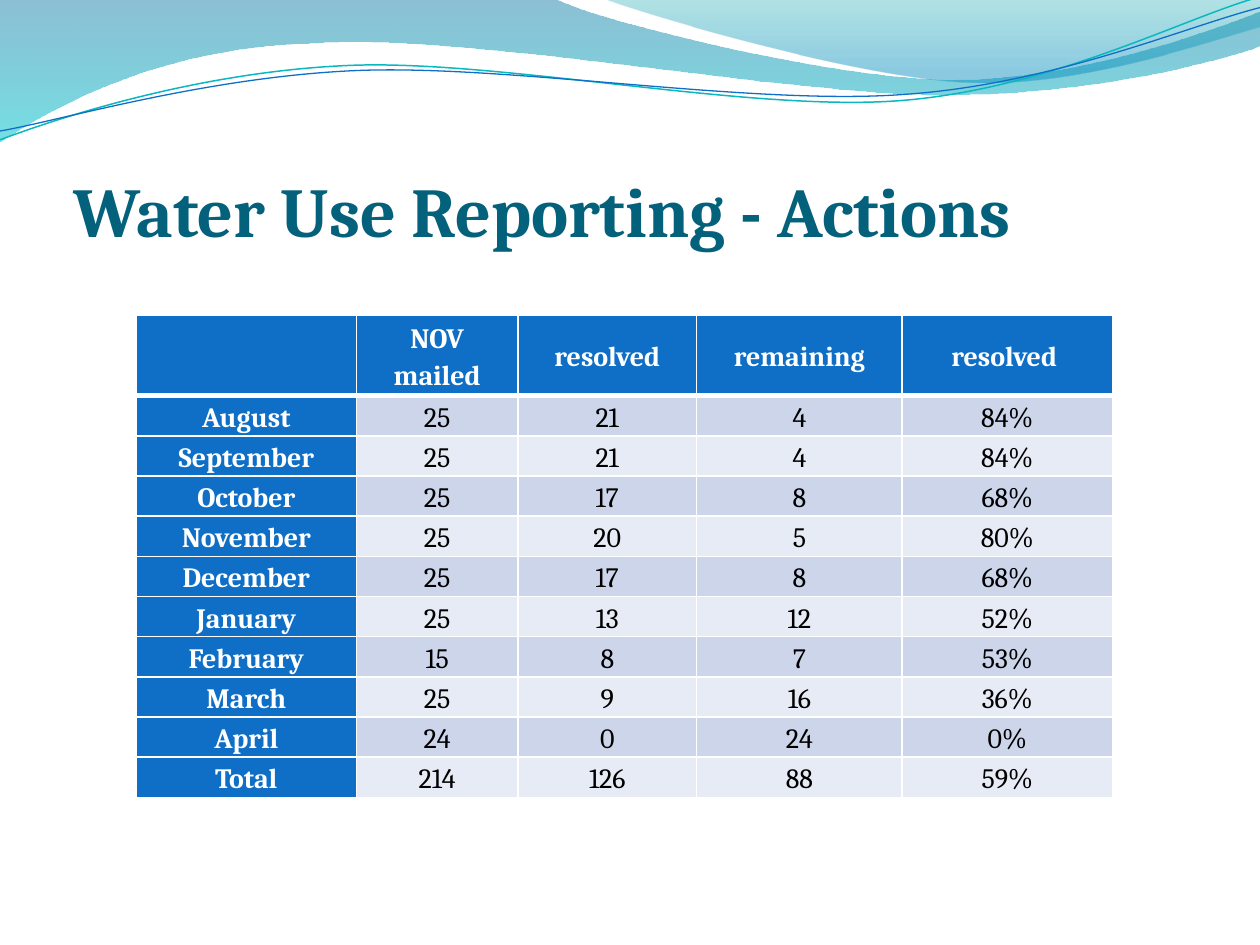
import math

from lxml import etree
from pptx import Presentation
from pptx import util as u
from pptx.dml.color import RGBColor
from pptx.enum import text
from pptx.oxml import ns

FONT = "Cambria"
BLUE, TITLE_TEAL, WHITE, BLACK = "0F6FC6", "04617B", "FFFFFF", "000000"
BANDS = ("CCD5EA", "E7EBF5")
LINE_TILT = -2.7

# Waves: a start point, then line points (2 numbers) or Bezier curves (6 numbers)
LEFT_WAVE = [(0, 0), (4.4, -0.01), (4.76, 0.17, 6.64, 0.63, 7.58, 0.63),
             (8.53, 0.63, 9.58, 0.26, 10, 0.09), (10.01, 0.36),
             (9.83, 0.44, 8.7, 0.76, 7.46, 0.75), (6.22, 0.75, 3.82, 0.28, 2.57, 0.34),
             (1.29, 0.36, 0.46, 0.83, -0.01, 1.13), (0, 0)]
RIGHT_WAVE = [(4.79, -0.01), (5.09, 0.11, 6.82, 0.62, 7.69, 0.65),
              (8.56, 0.69, 9.61, 0.32, 10, 0.21), (10, 0), (4.79, -0.01)]
TEAL_LINE = [(0, 1.11), (0.48, 0.93, 1.58, 0.57, 2.77, 0.52),
             (3.95, 0.47, 5.93, 0.89, 7.13, 0.8), (8.33, 0.71, 9.38, 0.15, 9.98, -0.02)]
BLUE_LINE = [(0, 1.04), (0.47, 0.96, 1.64, 0.61, 2.83, 0.56),
             (4.03, 0.51, 5.97, 0.84, 7.17, 0.75), (8.36, 0.67, 9.41, 0.21, 10, 0.06)]

HEADINGS = ("", "NOV mailed", "resolved", "remaining", "resolved ")
ACTIONS = [
    ("August", 25, 21, 4, "84%"),
    ("September", 25, 21, 4, "84%"),
    ("October", 25, 17, 8, "68%"),
    ("November", 25, 20, 5, "80%"),
    ("December", 25, 17, 8, "68%"),
    ("January", 25, 13, 12, "52%"),
    ("February", 15, 8, 7, "53%"),
    ("March", 25, 9, 16, "36%"),
    ("April", 24, 0, 24, "0%"),
    ("Total", 214, 126, 88, "59%"),
]
COLUMN_WIDTHS = (1.75, 1.28, 1.42, 1.63, 1.67)
HEADER_HEIGHT = 0.64


def colour(value):
    return RGBColor.from_string(value)


def add_xml(parent, tag, **attributes):
    child = etree.SubElement(parent, ns.qn(tag))
    for name, value in attributes.items():
        child.set(name, str(value))
    return child


def write(frame, words, size=16, color=BLACK, bold=False, align=text.PP_ALIGN.LEFT,
          spacing=None, hanging=0):
    para = frame.paragraphs[0]
    para.alignment = align
    para.line_spacing = spacing
    if hanging:
        properties = para._p.get_or_add_pPr()
        properties.set("marL", str(u.Inches(hanging)))
        properties.set("indent", str(u.Inches(-hanging)))
    span = para.add_run()
    span.text = words
    span.font.name, span.font.size = FONT, u.Pt(size)
    span.font.bold, span.font.color.rgb = bold, colour(color)


def draw_path(page, path, left, top, width, height, tilt=0):
    """Draw a path given in slide inches in its box, which is tilted by some degrees."""
    middle_x, middle_y = left + width / 2, top + height / 2
    sine, cosine = math.sin(math.radians(-tilt)), math.cos(math.radians(-tilt))

    def local(x, y):
        dx, dy = x - middle_x, y - middle_y
        return (u.Inches(dx * cosine - dy * sine + width / 2),
                u.Inches(dx * sine + dy * cosine + height / 2))

    builder = page.shapes.build_freeform(*local(*path[0]), scale=1.0)
    builder.add_line_segments([local(*part[-2:]) for part in path[1:]], close=False)
    shape = builder.convert_to_shape()
    shape.left, shape.top = u.Inches(left), u.Inches(top)
    shape.width, shape.height = u.Inches(width), u.Inches(height)
    shape.rotation = tilt
    shape.shadow.inherit = False

    # Turn the straight segments into curves
    outline = next(shape.element.iter(ns.qn("a:path")))
    outline.set("w", str(shape.width))
    outline.set("h", str(shape.height))
    for child in list(outline):
        outline.remove(child)
    for index, part in enumerate(path):
        tag = "a:cubicBezTo" if len(part) == 6 else "a:lnTo" if index else "a:moveTo"
        segment = add_xml(outline, tag)
        for x, y in zip(part[::2], part[1::2]):
            point_x, point_y = local(x, y)
            add_xml(segment, "a:pt", x=point_x, y=point_y)
    if path[0] == path[-1]:
        add_xml(outline, "a:close")
    return shape


def fill_gradient(shape, stops):
    """Top-down gradient from (position %, colour, opacity %) stops."""
    shape.fill.gradient()
    gradient = shape.element.spPr.find(ns.qn("a:gradFill"))
    for child in list(gradient):
        gradient.remove(child)
    stop_list = add_xml(gradient, "a:gsLst")
    for position, value, opacity in stops:
        stop = add_xml(stop_list, "a:gs", pos=position * 1000)
        add_xml(add_xml(stop, "a:srgbClr", val=value), "a:alpha", val=opacity * 1000)
    add_xml(gradient, "a:lin", ang=90 * 60000, scaled=0)


def draw_waves(page):
    # Translucent bands
    for path, box, stops in (
        (LEFT_WAVE, (-0.01, -0.01, 10.02, 1.14), [(0, "0074A1", 45), (100, "00C6CF", 55)]),
        (RIGHT_WAVE, (4.79, -0.01, 5.21, 0.7), [(0, "00A1A9", 30), (80, "008BBF", 45)]),
    ):
        band = draw_path(page, path, *box)
        fill_gradient(band, stops)
        band.line.fill.background()
    # Thin lines
    for path, box, value, width in (
        (TEAL_LINE, (-0.02, 0.22, 10.02, 0.71), "0AB8BF", 0.85),
        (BLUE_LINE, (-0.02, 0.3, 10.03, 0.58), BLUE, 0.75),
    ):
        curve = draw_path(page, path, *box, tilt=LINE_TILT)
        curve.fill.background()
        curve.line.color.rgb = colour(value)
        curve.line.width = u.Pt(width)


def place_title(page, left, top, width, height):
    title = page.shapes.title
    title.left, title.top = u.Inches(left), u.Inches(top)
    title.width, title.height = u.Inches(width), u.Inches(height)
    frame = title.text_frame
    frame.margin_left = frame.margin_right = frame.margin_bottom = 0
    frame.margin_top = u.Inches(0.05)
    frame.vertical_anchor = text.MSO_ANCHOR.BOTTOM
    write(frame, "Water Use Reporting - Actions", size=40, color=TITLE_TEAL, bold=True)
    title.element.getparent().append(title.element)  # in front of the waves


def format_cell(cell, words, fill, top_width, bottom_width, **font):
    cell.margin_left = cell.margin_right = u.Inches(0.07)
    cell.margin_top = cell.margin_bottom = 0
    cell.vertical_anchor = text.MSO_ANCHOR.MIDDLE
    properties = cell._tc.get_or_add_tcPr()
    for side, width in (("L", 1), ("R", 1), ("T", top_width), ("B", bottom_width)):
        border = add_xml(properties, f"a:ln{side}", w=u.Pt(width))
        add_xml(add_xml(border, "a:solidFill"), "a:srgbClr", val=WHITE)
    cell.fill.solid()
    cell.fill.fore_color.rgb = colour(fill)
    if words:
        write(cell.text_frame, words, align=text.PP_ALIGN.CENTER, spacing=1.15, **font)


def place_table(page, left, top, width, height):
    rows = [HEADINGS, *ACTIONS]
    row_height = (height - HEADER_HEIGHT) / len(ACTIONS)
    table = page.shapes.add_table(
        len(rows), len(HEADINGS), u.Inches(left), u.Inches(top),
        u.Inches(width), u.Inches(height)).table
    table.first_col = True
    for column, column_width in zip(table.columns, COLUMN_WIDTHS):
        column.width = u.Inches(column_width)
    for r, values in enumerate(rows):
        table.rows[r].height = u.Inches(row_height if r else HEADER_HEIGHT)
        for c, value in enumerate(values):
            heading = r == 0 or c == 0
            flush = c == len(values) - 1 or (r, c) == (0, 1)
            format_cell(table.cell(r, c), str(value),
                        fill=BLUE if heading else BANDS[(r - 1) % 2],
                        top_width=3 if r == 1 else 1, bottom_width=3 if r == 0 else 1,
                        color=WHITE if heading else BLACK, bold=heading,
                        hanging=0 if flush else 0.25)


def main():
    deck = Presentation()
    deck.slide_width, deck.slide_height = u.Inches(10), u.Inches(7.5)
    page = deck.slides.add_slide(deck.slide_layouts[5])
    draw_waves(page)
    place_title(page, 0.58, 0.75, 9, 1.25)
    place_table(page, 1.08, 2.5, sum(COLUMN_WIDTHS), 3.83)
    deck.save("out.pptx")


if __name__ == "__main__":
    main()
